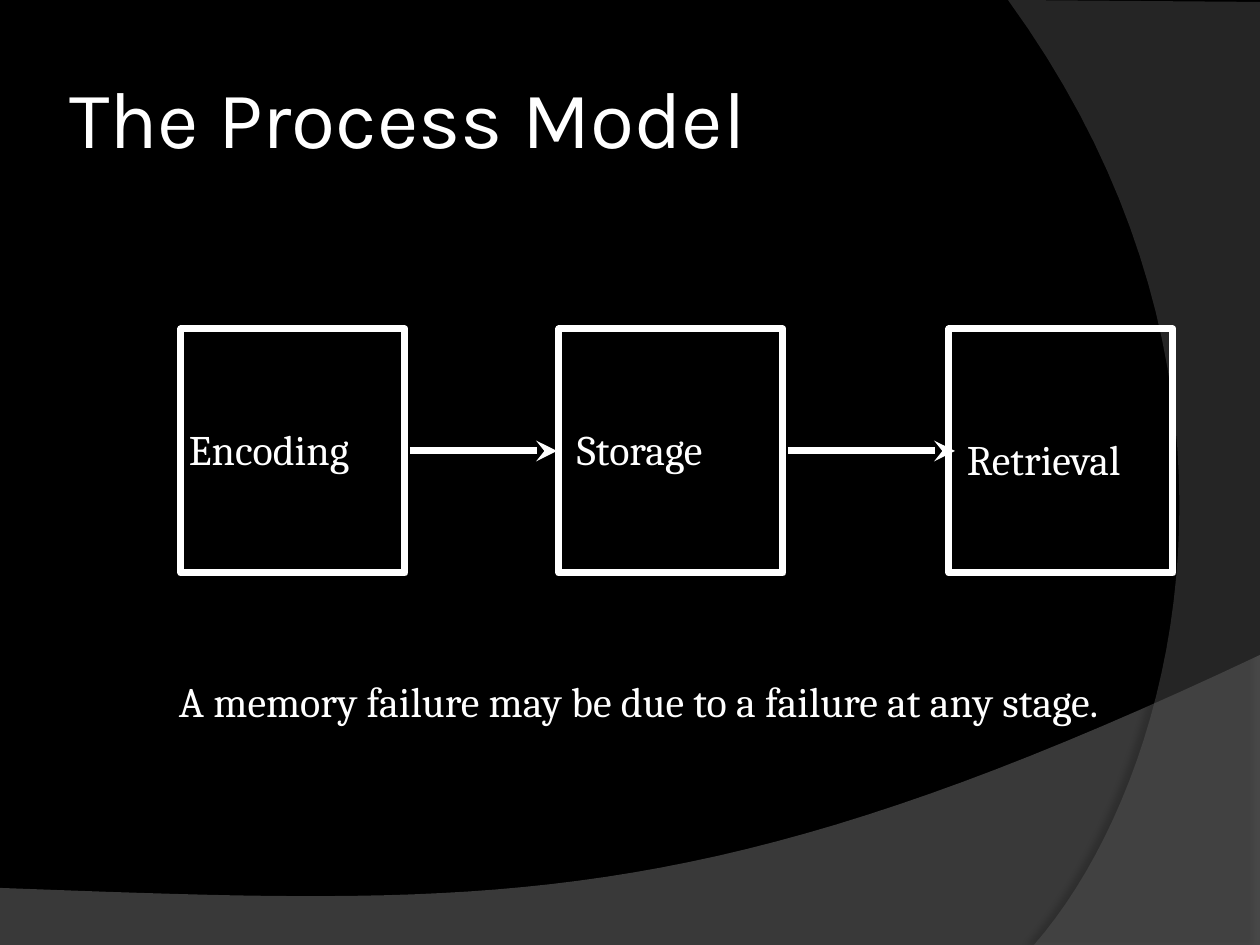
import lxml.etree
import pptx
import pptx.dml.color
import pptx.enum.shapes
import pptx.enum.text
import pptx.oxml
import pptx.oxml.ns
import pptx.util

SCALE = 914400 / 126  # EMU per px
WHITE = "FFFFFF"
CURVE_STEPS = 40


def px(*lengths):
    return [pptx.util.Emu(round(n * SCALE)) for n in lengths]


def rgb(value):
    return pptx.dml.color.RGBColor.from_string(value)


def bezier(start, c1, c2, end):
    """Points along a cubic curve, without its start."""
    points = []
    for i in range(1, CURVE_STEPS + 1):
        t = i / CURVE_STEPS
        weights = ((1 - t) ** 3, 3 * t * (1 - t) ** 2, 3 * t * t * (1 - t), t ** 3)
        points.append(tuple(sum(w * p[axis] for w, p in zip(weights, (start, c1, c2, end)))
                            for axis in (0, 1)))
    return points


def write(tf, text, font="Cambria", size=24, color=WHITE, wrap=False,
          anchor=pptx.enum.text.MSO_ANCHOR.TOP, insets=(13, 6, 13, 6)):
    tf.word_wrap = wrap
    tf.vertical_anchor = anchor
    tf.margin_left, tf.margin_top, tf.margin_right, tf.margin_bottom = px(*insets)
    p = tf.paragraphs[0]
    p.alignment = pptx.enum.text.PP_ALIGN.LEFT
    r = p.add_run()
    r.text = text
    r.font.name, r.font.size = font, pptx.util.Pt(size)
    r.font.color.rgb = rgb(color)


class Deck:
    def __init__(self, width, height, background):
        self.prs = pptx.Presentation()
        self.prs.slide_width, self.prs.slide_height = px(width, height)
        self.s = self.prs.slides.add_slide(self.prs.slide_layouts[5])
        fill = self.s.background.fill
        fill.solid()
        fill.fore_color.rgb = rgb(background)

    def title(self, text, *box):
        sp = self.s.shapes.title
        sp.left, sp.top, sp.width, sp.height = px(*box)
        write(sp.text_frame, text, font="Karla", size=46, wrap=True,
              anchor=pptx.enum.text.MSO_ANCHOR.MIDDLE, insets=(6, 6, 6, 6))

    def text(self, text, *box):
        sp = self.s.shapes.add_textbox(*px(*box))
        write(sp.text_frame, text)
        sp.text_frame.auto_size = pptx.enum.text.MSO_AUTO_SIZE.SHAPE_TO_FIT_TEXT

    def frame(self, *box):
        sp = self.s.shapes.add_shape(pptx.enum.shapes.MSO_SHAPE.RECTANGLE, *px(*box))
        sp.shadow.inherit = False
        sp.fill.background()
        self.stroke(sp.line)

    def stroke(self, line):
        line.color.rgb = rgb(WHITE)
        line.width = pptx.util.Pt(4)

    def arrow(self, x1, x2, y):
        c = self.s.shapes.add_connector(
            pptx.enum.shapes.MSO_CONNECTOR.STRAIGHT, *px(x1, y, x2, y))
        self.stroke(c.line)
        ln = c.line._get_or_add_ln()
        lxml.etree.SubElement(ln, pptx.oxml.ns.qn("a:tailEnd"), type="stealth")
        lxml.etree.SubElement(c._element.spPr, pptx.oxml.ns.qn("a:effectLst"))

    def swoosh(self, points, color, opacity, shadow_opacity, distance, direction):
        start, *rest = [px(*point) for point in points]
        builder = self.s.shapes.build_freeform(*start, scale=1.0)
        builder.add_line_segments(rest, close=True)
        sp = builder.convert_to_shape()
        sp.fill.solid()
        sp.fill.fore_color.rgb = rgb(color)
        sp.line.fill.background()
        srgb = sp._element.spPr.find(".//" + pptx.oxml.ns.qn("a:srgbClr"))
        lxml.etree.SubElement(srgb, pptx.oxml.ns.qn("a:alpha"), val=str(opacity * 1000))
        sp._element.spPr.append(pptx.oxml.parse_xml(
            f'<a:effectLst {pptx.oxml.ns.nsdecls("a")}>'
            f'<a:outerShdw blurRad="{pptx.util.Pt(4)}" dist="{pptx.util.Pt(distance)}" '
            f'dir="{direction * 60000}" algn="ctr" rotWithShape="0">'
            f'<a:srgbClr val="000000"><a:alpha val="{shadow_opacity * 1000}"/></a:srgbClr>'
            '</a:outerShdw></a:effectLst>'))
        # Decoration lies behind the title
        self.s.shapes.title._element.addprevious(sp._element)


def main():
    deck = Deck(1260, 945, "000000")

    # Background curves
    deck.swoosh([(0, 888), (0, 946), (1260, 946), (1260, 655)]
                + bezier((1260, 655), (704, 918), (493, 906), (0, 888)),
                "7F7F7F", 45, 35, 3.5, 270)
    deck.swoosh([(1260, 2), (1260, 945), (1034, 945)]
                + bezier((1034, 945), (1178, 780), (1283, 378), (1008, 0)),
                "5E5E5E", 40, 45, 4, 180)

    deck.title("The Process Model", 63, 38, 922, 157)

    # Stage boxes
    for left in (181, 559, 949):
        deck.frame(left, 329, 224, 244)

    # Arrows between stages
    for x1, x2 in ((410, 557), (788, 955)):
        deck.arrow(x1, x2, 451)

    # Stage names and closing remark
    for label, left, top, width in (
            ("Encoding", 176, 418, 203),
            ("Storage", 564, 418, 165),
            ("Retrieval", 954, 428, 193),
            ("A memory failure may be due to a failure at any stage.", 166, 670, 1037)):
        deck.text(label, left, top, width, 63)

    deck.prs.save("out.pptx")


if __name__ == "__main__":
    main()
